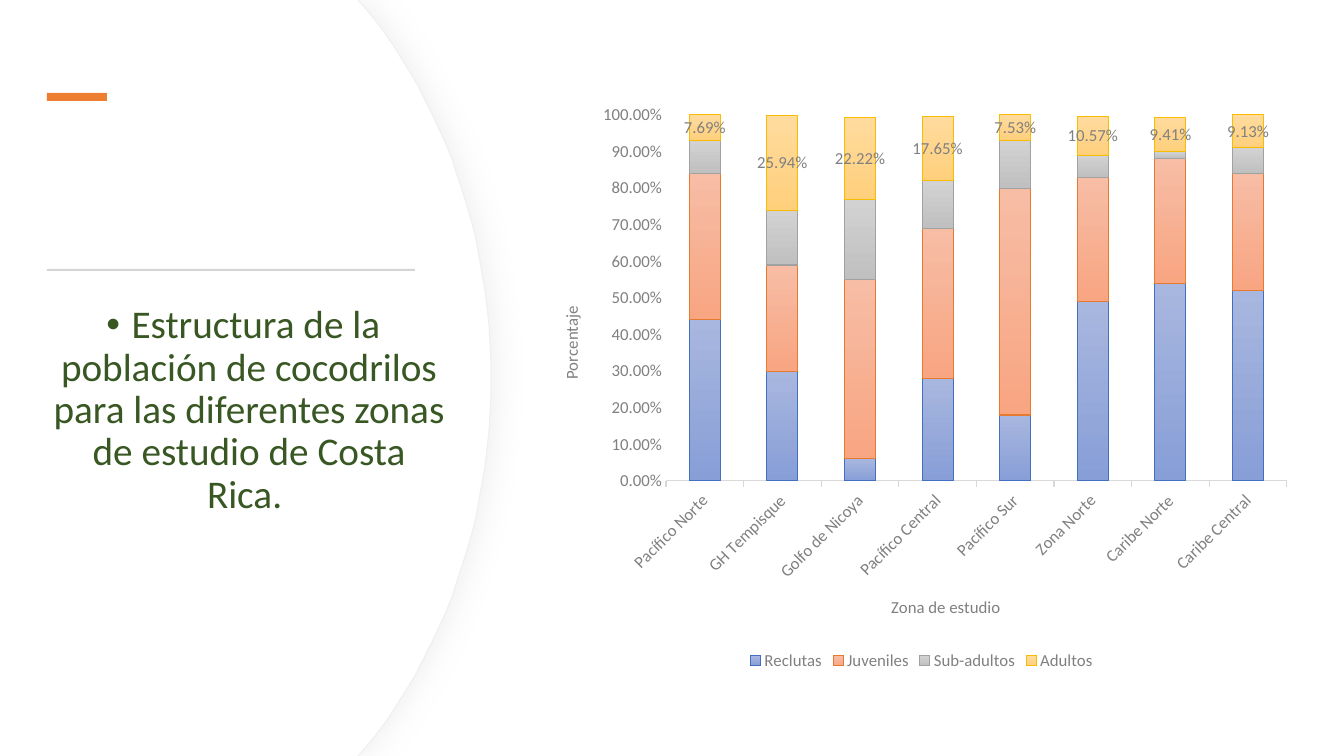
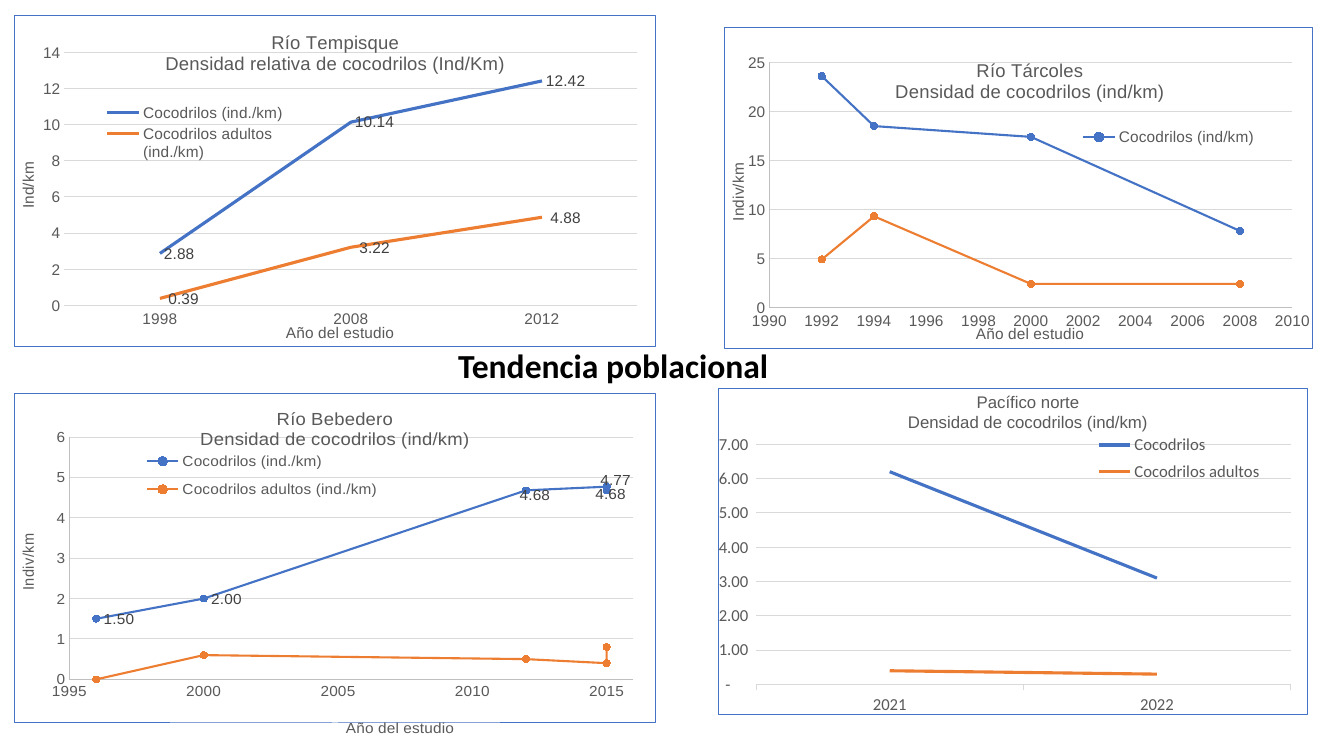
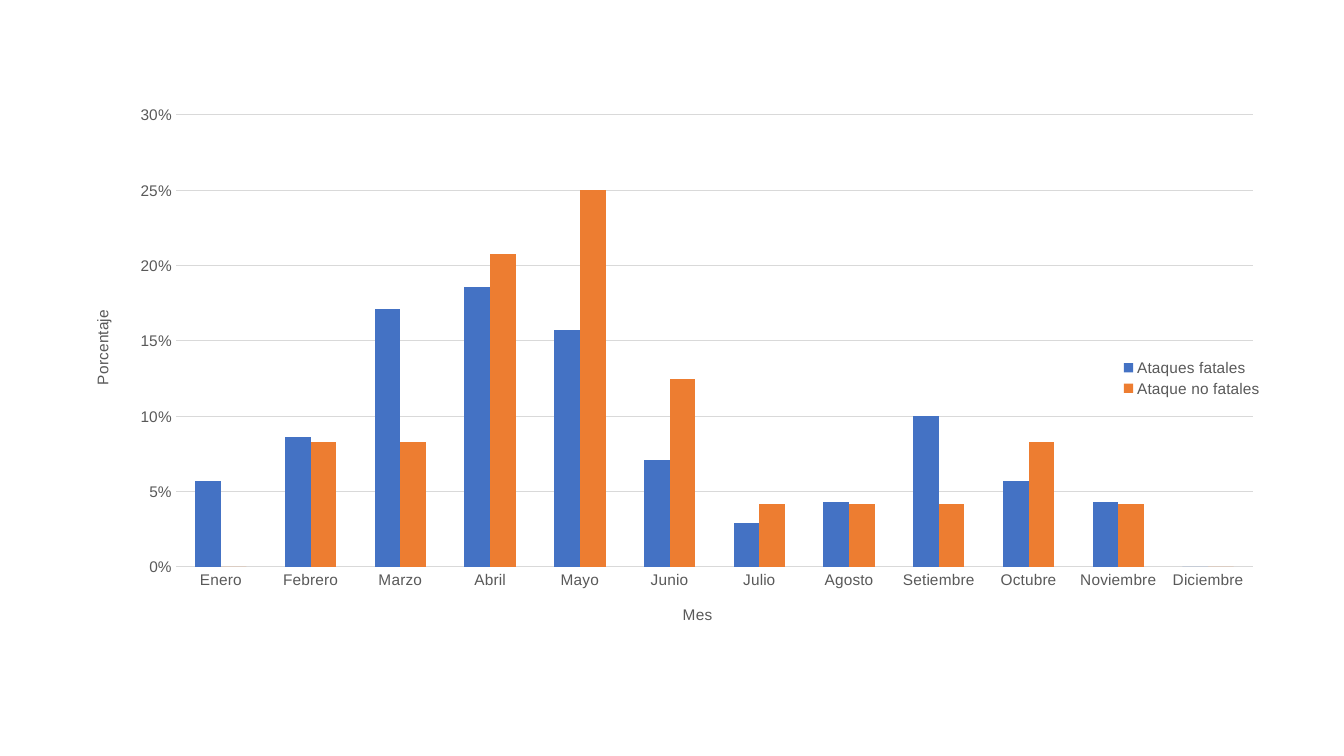
import pptx
import pptx.chart.data
import pptx.dml.color
import pptx.enum.chart
import pptx.enum.shapes
import pptx.enum.text
import pptx.oxml
import pptx.oxml.ns
import pptx.util

PX = 9071  # EMU in one px of a 1344 x 756 slide
KIND = pptx.enum.chart.XL_CHART_TYPE
TICK = pptx.enum.chart.XL_TICK_MARK
SPOT = pptx.enum.chart.XL_LABEL_POSITION
SIDE = pptx.enum.chart.XL_LEGEND_POSITION
qn = pptx.oxml.ns.qn
rgb = pptx.dml.color.RGBColor.from_string
Pt = pptx.util.Pt


class Theme:
    white, black = "FFFFFF", "000000"
    blue, orange, green = "4472C4", "ED7D31", "385723"
    text, muted, label = "595959", "808080", "404040"
    rule, grid, axis, edge = "D5D5D5", "D9D9D9", "BFBFBF", "EFEFEF"
    sans, plain = "Calibri", "Arial"
    body, heading, caption, small, chart_title = 28, 24, 12, 11, 13.2
    # top, bottom and outline of the stacked columns
    gradients = [("A8B7DF", "889ED7", "436FC0"), ("F7BDA5", "F8A582", "E87A30"),
                 ("D2D2D2", "C0C0C0", "A1A1A1"), ("FFDB9E", "FFD07C", "F9BC00")]


def style(font, name, size, colour, bold=False):
    font.name, font.size, font.bold = name, Pt(size), bold
    font.color.rgb = rgb(colour)


def place(part, frame, spot, inner=False):
    """Set a chart part at a slide position in px, inside the chart's frame."""
    layout = part.find(qn("c:layout"))
    if layout is None:
        layout = pptx.oxml.parse_xml(f"<c:layout {pptx.oxml.ns.nsdecls('c')}/>")
        overlay = part.find(qn("c:overlay"))
        if overlay is None:
            part.insert(0, layout)
        else:
            overlay.addprevious(layout)
    manual = layout.makeelement(qn("c:manualLayout"), {})
    layout.append(manual)
    shares = [(spot[0] - frame[0]) / frame[2], (spot[1] - frame[1]) / frame[3]]
    shares += [length / whole for length, whole in zip(spot[2:], frame[2:])]
    settings = [("layoutTarget", "inner")] if inner else []
    settings += [("xMode", "edge"), ("yMode", "edge")]
    settings += [(key, f"{share:.4f}") for key, share in zip("xywh", shares)]
    for key, value in settings:
        manual.append(manual.makeelement(qn("c:" + key), {"val": value}))


deck = pptx.Presentation()
deck.slide_width, deck.slide_height = 1344 * PX, 756 * PX
structure, trend, attacks = [deck.slides.add_slide(deck.slide_layouts[i]) for i in (1, 5, 6)]

# Slide 1: curved panel, drawn as two nearly equal outlines
curve = [(365, 8), (443, 103), (491, 234), (491, 378)]
steps = [i / 24 for i in range(25)]
arc = [tuple((1 - t) ** 3 * a + 3 * t * (1 - t) ** 2 * b + 3 * t * t * (1 - t) * c + t ** 3 * d
             for a, b, c, d in zip(*curve)) for t in steps]
half = [(358, 0)] + arc
outline = half + [(x, 756 - y) for x, y in reversed(half)] + [(0, 756)]
for shift, edged in ((0, True), (1, False)):
    builder = structure.shapes.build_freeform(0, 0, scale=PX)
    builder.add_line_segments([(max(x - shift, 0), y) for x, y in outline], close=True)
    panel = builder.convert_to_shape()
    panel.shadow.inherit = False
    panel.fill.solid()
    panel.fill.fore_color.rgb = rgb(Theme.white)
    if edged:
        panel.line.color.rgb = rgb(Theme.edge)
        panel.line.width = Pt(0.75)
        effects = panel.element.spPr.find(qn("a:effectLst"))
        effects.append(pptx.oxml.parse_xml(
            f'<a:outerShdw {pptx.oxml.ns.nsdecls("a")} blurRad="254000" dist="38100" dir="0">'
            f'<a:srgbClr val="{Theme.grid}"><a:alpha val="40000"/></a:srgbClr></a:outerShdw>'))
    else:
        panel.line.fill.background()

# Slide 1: accent bar and rule
for x, y, width, height, colour in ((47, 93, 60, 8, Theme.orange), (47, 269, 368, 2, Theme.rule)):
    bar = structure.shapes.add_shape(pptx.enum.shapes.MSO_SHAPE.RECTANGLE,
                                     x * PX, y * PX, width * PX, height * PX)
    bar.shadow.inherit = False
    bar.fill.solid()
    bar.fill.fore_color.rgb = rgb(colour)
    bar.line.fill.background()

# Slide 1: body text, above the panel
title = structure.shapes.title.element
title.getparent().remove(title)
body = structure.placeholders[1]
structure.shapes.element.append(body.element)
body.left, body.top, body.width, body.height = 41 * PX, 300 * PX, 416 * PX, 268 * PX
body.text_frame.text = ("Estructura de la población de cocodrilos para las diferentes "
                        "zonas de estudio de Costa Rica. ")
para = body.text_frame.paragraphs[0]
para.alignment = pptx.enum.text.PP_ALIGN.CENTER
para.line_spacing, para.space_before, para.space_after = 0.9, Pt(0), Pt(6)
indent = para._p.get_or_add_pPr()
indent.set("marL", "0")
indent.set("indent", "-228600")
style(para.runs[0].font, Theme.sans, Theme.body, Theme.green)

# Slide 2: title
heading = trend.shapes.title
heading.left, heading.top, heading.width, heading.height = 448 * PX, 340 * PX, 416 * PX, 50 * PX
heading.text_frame.text = "Tendencia poblacional"
heading.text_frame.auto_size = pptx.enum.text.MSO_AUTO_SIZE.NONE
para = heading.text_frame.paragraphs[0]
para.alignment = pptx.enum.text.PP_ALIGN.LEFT
style(para.runs[0].font, Theme.sans, Theme.heading, Theme.black, True)

# Charts: frames and positions in px on the slide; scales are (min, max, step);
# nudges move single labels by (right, down)
accounting = '_(* #,##0.00_);_(* \\(#,##0.00\\);_(* "-"??_);_(@_)'
charts = [
    dict(page=structure, kind=KIND.COLUMN_STACKED, frame=(540, 93, 763, 582),
         plot=(666, 115, 621, 366), font=(Theme.sans, Theme.caption, Theme.muted),
         x=["Pacífico Norte", "GH Tempisque", "Golfo de Nicoya", "Pacífico Central",
            "Pacífico Sur", "Zona Norte", "Caribe Norte", "Caribe Central"],
         series={"Reclutas": [.44, .3, .06, .28, .18, .49, .54, .52],
                 "Juveniles": [.4, .29, .49, .41, .62, .34, .34, .32],
                 "Sub-adultos": [.09, .15, .22, .13, .13, .06, .02, .07],
                 "Adultos": [.0769, .2594, .2222, .1765, .0753, .1057, .0941, .0913]},
         labels={"Adultos": [SPOT.CENTER] * 8}, label_colour=Theme.muted, data_format="0.00%",
         y_scale=(0, 1, .1), y_format="0.00%", grid=False, tick=TICK.OUTSIDE, turn=-45,
         x_title=("Zona de estudio", 888, 593), y_title=("Porcentaje", 557, 303)),
    dict(page=trend, kind=KIND.XY_SCATTER_LINES, frame=(724, 27, 589, 322),
         plot=(769, 62, 524, 246), border=True, x=[1992, 1994, 2000, 2008],
         series={"Cocodrilos (ind/km)": [23.6, 18.5, 17.4, 7.8],
                 "Cocodrilos adultos (ind/km)": [4.9, 9.3, 2.4, 2.4]},
         x_scale=(1990, 2010, 2), y_scale=(0, 25, 5), y_line=True,
         title=("Río Tárcoles\nDensidad de cocodrilos (ind/km)", 892, 55),
         x_title=("Año del estudio", 973, 321), y_title=("Indiv/km", 722, 160),
         legend=(1078, 125, 182, 24), hide_entry=1),
    dict(page=trend, kind=KIND.LINE, frame=(14, 15, 642, 332),
         plot=(64, 52, 574, 254), border=True, x=["1998", "2008", "2012"],
         series={"Cocodrilos (ind./km)": [2.88, 10.14, 12.42],
                 "Cocodrilos adultos (ind./km)": [.39, 3.22, 4.88]},
         labels={"Cocodrilos (ind./km)": [SPOT.RIGHT] * 3,
                 "Cocodrilos adultos (ind./km)": [SPOT.RIGHT] * 3},
         series_formats={"Cocodrilos adultos (ind./km)": accounting},
         y_scale=(0, 14, 2),
         title=("Río Tempisque\nDensidad relativa de cocodrilos (Ind/Km)", 162, 27),
         x_title=("Año del estudio", 283, 320), y_title=("Ind/km", 12, 159),
         legend=(97, 100, 196, 64)),
    dict(page=trend, kind=KIND.XY_SCATTER_LINES, frame=(14, 393, 642, 348),
         plot=(69, 439, 565, 256), border=True, x=[1996, 2000, 2012, 2015, 2015],
         series={"Cocodrilos (ind./km)": [1.5, 2, 4.68, 4.77, 4.68],
                 "Cocodrilos adultos (ind./km)": [0, .6, .5, .4, .8]},
         labels={"Cocodrilos (ind./km)":
                 [SPOT.RIGHT, SPOT.RIGHT, SPOT.BELOW, SPOT.ABOVE, SPOT.BELOW]},
         nudges={2: (9, -11), 3: (9, 9), 4: (4, -12)},
         x_scale=(1995, 2016, 5), y_scale=(0, 6, 1), y_line=True,
         title=("Río Bebedero\nDensidad de cocodrilos (ind/km)", 197, 405),
         x_title=("Año del estudio", 343, 733), y_title=("Indiv/km", 12, 540),
         legend=(142, 444, 240, 71)),
    dict(page=trend, kind=KIND.LINE, frame=(715, 388, 593, 327),
         plot=(753, 444, 538, 241), border=True, x=["2021", "2022"],
         font=(Theme.sans, Theme.caption, Theme.text),
         series={"Cocodrilos": [6.2, 3.1], "Cocodrilos adultos": [.4, .3]},
         y_scale=(0, 7, 1), y_format=accounting, tick=TICK.OUTSIDE,
         legend=(1094, 428, 170, 60)),
    dict(page=attacks, kind=KIND.COLUMN_CLUSTERED, frame=(71, 71, 1203, 614),
         plot=(176, 115, 1077, 452),
         x=["Enero", "Febrero", "Marzo", "Abril", "Mayo", "Junio", "Julio", "Agosto",
            "Setiembre", "Octubre", "Noviembre", "Diciembre"],
         series={"Ataques fatales": [.057, .086, .171, .186, .157, .071,
                                     .029, .043, .1, .057, .043, 0],
                 "Ataque no fatales": [0, .083, .083, .208, .25, .125,
                                       .042, .042, .042, .083, .042, 0]},
         y_scale=(0, .3, .05), y_format="0%", data_format="0%",
         x_title=("Mes", 680, 601), y_title=("Porcentaje", 89, 307),
         legend=(1121, 356, 142, 44)),
]

for item in charts:
    kind, frame = item["kind"], item["frame"]
    scatter, line = kind == KIND.XY_SCATTER_LINES, kind == KIND.LINE
    font = item.get("font", (Theme.plain, Theme.small, Theme.text))

    # Data
    make = pptx.chart.data.XyChartData if scatter else pptx.chart.data.CategoryChartData
    data = make(number_format=item.get("data_format", "0.00"))
    if not scatter:
        data.categories = item["x"]
    for name, values in item["series"].items():
        if scatter:
            points = data.add_series(name)
            for x, y in zip(item["x"], values):
                points.add_data_point(x, y)
        else:
            data.add_series(name, values, item.get("series_formats", {}).get(name))
    chart = item["page"].shapes.add_chart(kind, *[n * PX for n in frame], data).chart
    style(chart.font, *font)

    # Frame and plot area
    stroke = (f'<a:solidFill><a:srgbClr val="{Theme.blue}"/></a:solidFill>'
              if item.get("border") else "<a:noFill/>")
    chart.element.find(qn("c:chart")).addnext(pptx.oxml.parse_xml(
        f'<c:spPr {pptx.oxml.ns.nsdecls("c", "a")}><a:noFill/>'
        f'<a:ln w="9525">{stroke}</a:ln></c:spPr>'))
    place(chart.element.find(".//" + qn("c:plotArea")), frame, item["plot"], inner=True)

    # Axes
    axes = {"x": chart.category_axis, "y": chart.value_axis}
    for key, axis in axes.items():
        axis.has_major_gridlines = key == "y" and item.get("grid", True)
        if axis.has_major_gridlines:
            axis.major_gridlines.format.line.color.rgb = rgb(Theme.grid)
            axis.major_gridlines.format.line.width = Pt(0.75)
        axis.minor_tick_mark = TICK.NONE
        axis.major_tick_mark = item.get("tick", TICK.NONE) if key == "x" else TICK.NONE
        if key == "x" or item.get("y_line"):
            axis.format.line.color.rgb = rgb(Theme.axis if scatter else Theme.grid)
            axis.format.line.width = Pt(0.75)
        else:
            axis.format.line.fill.background()
        style(axis.tick_labels.font, *font)
        if key + "_scale" in item:
            axis.minimum_scale, axis.maximum_scale, axis.major_unit = item[key + "_scale"]
            axis.tick_labels.number_format = item.get(key + "_format", "0")
            axis.tick_labels.number_format_is_linked = False
    if "turn" in item:
        turned = axes["x"]._element.find(qn("c:txPr")).find(qn("a:bodyPr"))
        turned.set("rot", str(item["turn"] * 60000))
        turned.set("vert", "horz")

    # Chart and axis titles
    chart.has_title = "title" in item
    for key in ("title", "x_title", "y_title"):
        if key not in item:
            continue
        words, x, y = item[key]
        caption = chart.chart_title if key == "title" else axes[key[0]].axis_title
        caption.text_frame.text = words
        for para in caption.text_frame.paragraphs:
            size = Theme.chart_title if key == "title" else font[1]
            style(para.runs[0].font, font[0], size, font[2])
        if key == "y_title":
            turned = caption.text_frame._txBody.find(qn("a:bodyPr"))
            turned.set("rot", "-5400000")
            turned.set("vert", "horz")
        place(caption.element, frame, (x, y))

    # Legend
    chart.has_legend = True
    legend = chart.legend
    legend.position = SIDE.RIGHT if "legend" in item else SIDE.BOTTOM
    legend.include_in_layout = False
    style(legend.font, *font)
    if "legend" in item:
        place(legend._element, frame, item["legend"])
    if "hide_entry" in item:
        legend._element.find(qn("c:legendPos")).addnext(pptx.oxml.parse_xml(
            f'<c:legendEntry {pptx.oxml.ns.nsdecls("c")}><c:idx val="{item["hide_entry"]}"/>'
            '<c:delete val="1"/></c:legendEntry>'))

    # Series and their labels
    plot = chart.plots[0]
    plot.vary_by_categories = False
    if not scatter and not line:
        plot.gap_width = 150
        plot.overlap = 100 if kind == KIND.COLUMN_STACKED else 0
    for index, series in enumerate(plot.series):
        colour = (Theme.blue, Theme.orange)[index % 2]
        look = series.format
        if scatter or line:
            look.line.color.rgb = rgb(colour)
            look.line.width = Pt(1.5 if scatter else 2.25)
            if line:
                series.smooth = False
            else:
                series.marker.style = pptx.enum.chart.XL_MARKER_STYLE.CIRCLE
                series.marker.size = 5
                series.marker.format.fill.solid()
                series.marker.format.fill.fore_color.rgb = rgb(colour)
                series.marker.format.line.color.rgb = rgb(colour)
        elif kind == KIND.COLUMN_STACKED:
            top, bottom, edge = Theme.gradients[index]
            look.fill.gradient()
            look.fill.gradient_angle = 270
            for stop, shade in zip(look.fill.gradient_stops, (top, bottom)):
                stop.color.rgb = rgb(shade)
            look.line.color.rgb = rgb(edge)
            look.line.width = Pt(0.75)
        else:
            look.fill.solid()
            look.fill.fore_color.rgb = rgb(colour)
        for number, spot in enumerate(item.get("labels", {}).get(series.name, [])):
            label = series.points[number].data_label
            style(label.font, font[0], font[1], item.get("label_colour", Theme.label))
            label.position = spot
            if number in item.get("nudges", {}):
                right, down = item["nudges"][number]
                mark = label.font._element.getparent().iterancestors(qn("c:dLbl"))
                next(mark).find(qn("c:idx")).addnext(pptx.oxml.parse_xml(
                    f'<c:layout {pptx.oxml.ns.nsdecls("c")}><c:manualLayout>'
                    f'<c:x val="{right / frame[2]:.4f}"/><c:y val="{down / frame[3]:.4f}"/>'
                    '</c:manualLayout></c:layout>'))

# Slide 2: heading of the northern Pacific chart
box = trend.shapes.add_textbox(692 * PX, 387 * PX, 672 * PX, 50 * PX)
box.text_frame.word_wrap = True
box.text_frame.text = "Pacífico norte\nDensidad de cocodrilos (ind/km)"
for para in box.text_frame.paragraphs:
    para.alignment = pptx.enum.text.PP_ALIGN.CENTER
    style(para.runs[0].font, Theme.plain, Theme.caption, Theme.text)

deck.save("out.pptx")
